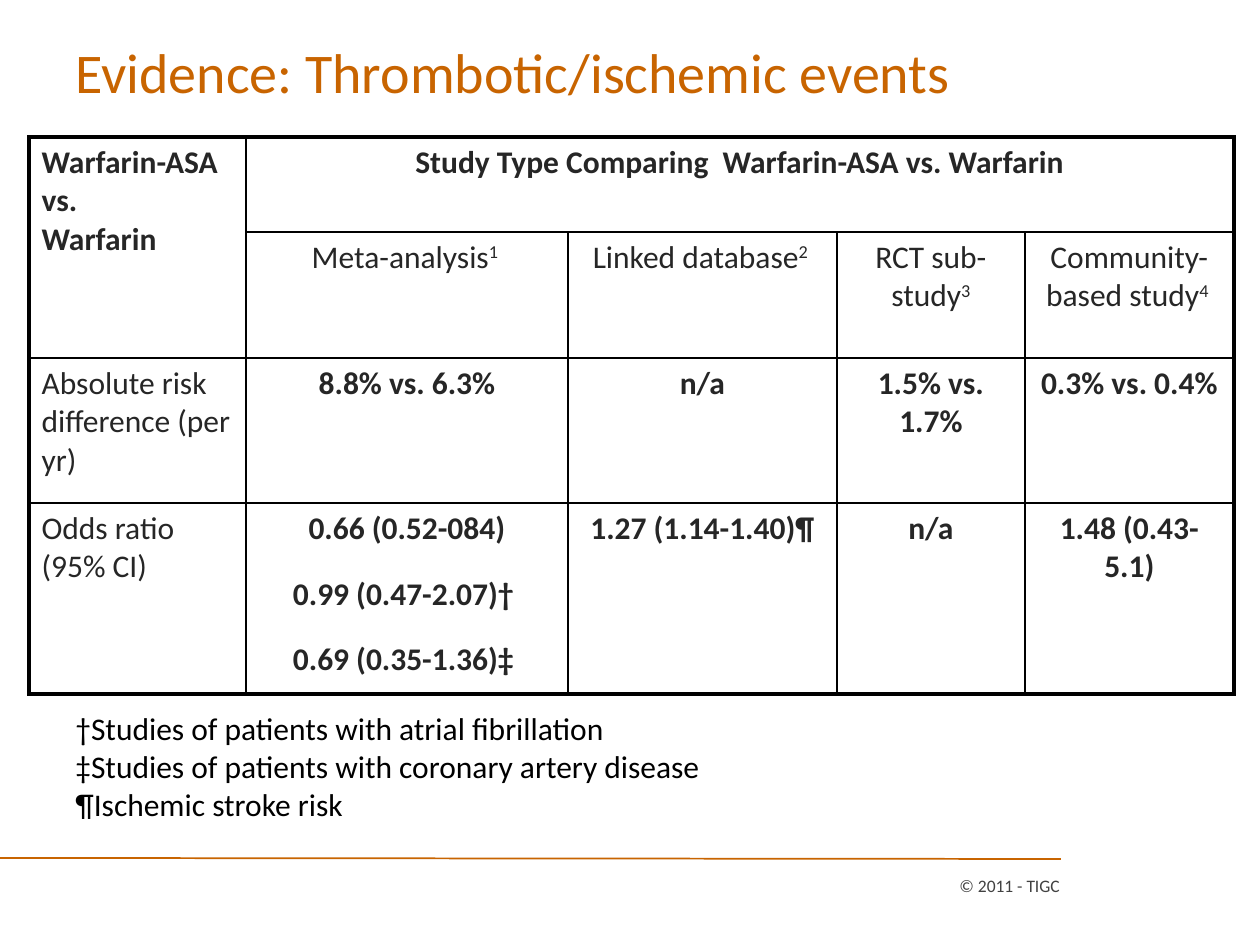
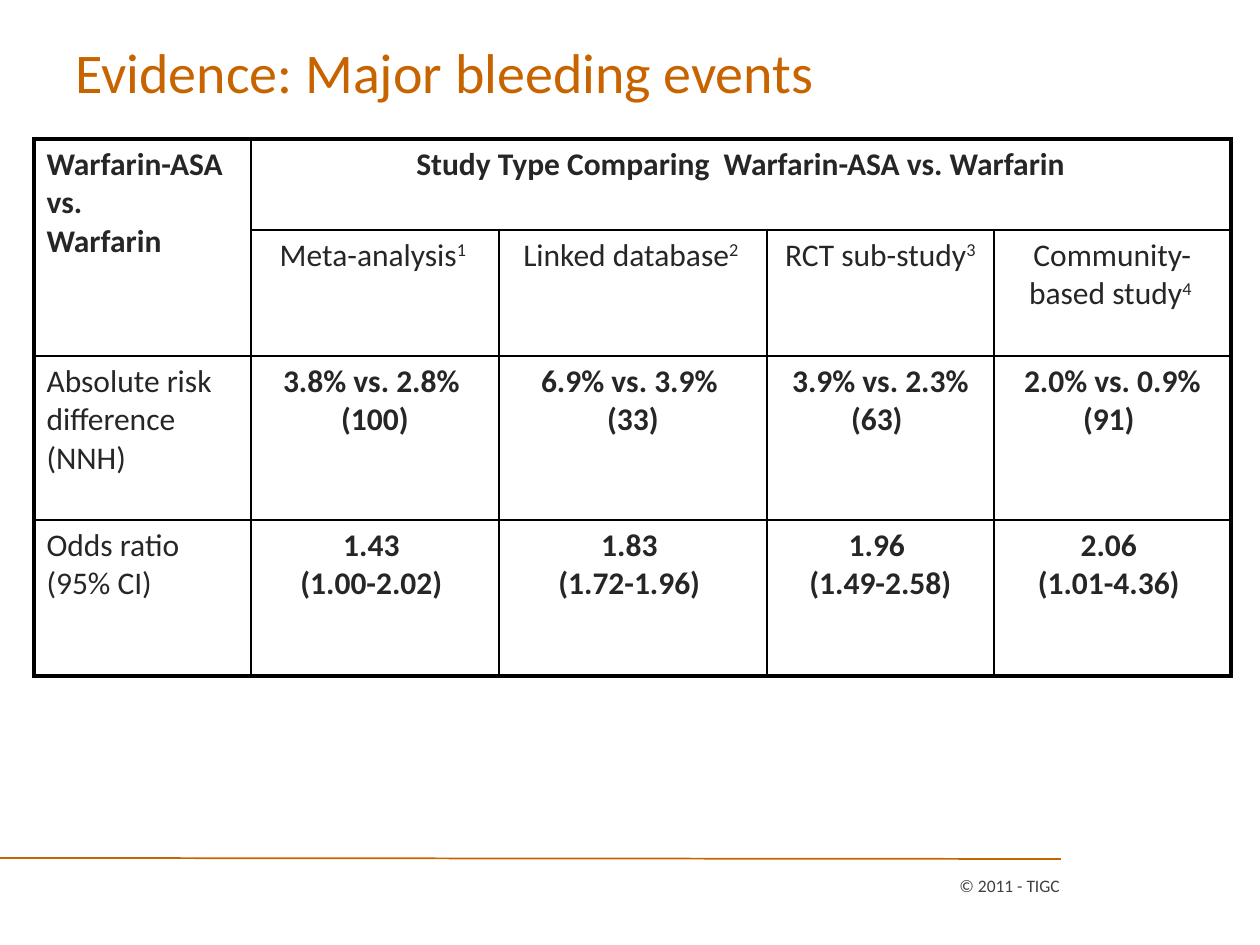
"""Build two evidence slides that compare warfarin-ASA with warfarin."""
import pptx
import pptx.dml.color
import pptx.enum.shapes
import pptx.enum.text
import pptx.oxml
import pptx.oxml.ns
import pptx.util

PX = 914400 // 126
ORANGE, INK, BLACK, GREY = "C86400", "262626", "000000", "414141"
LEFT = pptx.enum.text.PP_ALIGN.LEFT
CENTER = pptx.enum.text.PP_ALIGN.CENTER
RIGHT = pptx.enum.text.PP_ALIGN.RIGHT
TOP = pptx.enum.text.MSO_ANCHOR.TOP
MIDDLE = pptx.enum.text.MSO_ANCHOR.MIDDLE
THICK, THIN = 2.25, 1

TITLE = {"size": 32, "color": ORANGE}
NOTE = {"size": 18, "color": BLACK}
FOOTER = {"size": 10, "color": GREY}
BODY = {"size": 18, "color": INK}

CORNER = "Warfarin-ASA vs.\vWarfarin"
HEADING = "Study Type Comparing  Warfarin-ASA vs. Warfarin"
STUDIES = ["Meta-analysis^1 ", "Linked database^2 ", "RCT sub-study^3", "Community-based study^4 "]
COPYRIGHT = "© 2011 - TIGC"

SLIDES = [
    {
        "title": "Evidence: Thrombotic/ischemic events",
        "title_width": 1002,
        "origin": (29, 137),
        "columns": [217, 322, 269, 188, 209],
        "rows": [95, 103, 145, 191],
        "gap": 15.6,
        "results": [
            ["Absolute risk difference (per yr)", "8.8% vs. 6.3%", "n/a", "1.5% vs. 1.7%", "0.3% vs. 0.4%"],
            ["Odds ratio (95% CI)", "0.66 (0.52-084)\n0.99 (0.47-2.07)† \n0.69 (0.35-1.36)‡ ",
             "1.27 (1.14-1.40)¶", "n/a", "1.48 (0.43-5.1)"],
        ],
        "notes": "†Studies of patients with atrial fibrillation\n"
                 "‡Studies of patients with coronary artery disease\n"
                 "¶Ischemic stroke risk",
    },
    {
        "title": "Evidence: Major bleeding events",
        "title_width": 1071,
        "origin": (34, 139),
        "columns": [217, 248, 268, 227, 237],
        "rows": [91, 93, 164, 156],
        "gap": 0,
        "results": [
            ["Absolute risk difference (NNH)", "3.8% vs. 2.8% \n(100)", "6.9% vs. 3.9% \n(33)",
             "3.9% vs. 2.3% (63) ", "2.0% vs. 0.9% (91) "],
            ["Odds ratio (95% CI)", "1.43 \n(1.00-2.02) ", "1.83 \n(1.72-1.96) ",
             "1.96 \n(1.49-2.58)", "2.06 \n(1.01-4.36) "],
        ],
        "notes": "",
    },
]


def rgb(code):
    return pptx.dml.color.RGBColor.from_string(code)


def add_span(para, text, style, raised=False):
    span = para.add_run()
    span.text = text
    values = {"name": "Calibri", "size": pptx.util.Pt(style["size"]), "bold": style.get("bold", False)}
    for name, value in values.items():
        setattr(span.font, name, value)
    span.font.color.rgb = rgb(style["color"])
    if raised:
        span._r.get_or_add_rPr().set("baseline", "30000")


def write(frame, text, style, align=LEFT, gap=0):
    for index, line in enumerate(text.split("\n")):
        para = frame.add_paragraph() if index else frame.paragraphs[0]
        para.alignment = align
        if index and gap:
            para.space_before = pptx.util.Pt(gap)
        for number, part in enumerate(line.split("\v")):
            if number:
                para.add_line_break()
            base, _, mark = part.partition("^")
            add_span(para, base, style)
            if mark:
                add_span(para, mark, style, raised=True)


def add_text(page, area, text, style, align=LEFT, anchor=TOP):
    box = page.shapes.add_textbox(*(length * PX for length in area))
    frame = box.text_frame
    for name, value in {"word_wrap": True, "vertical_anchor": anchor}.items():
        setattr(frame, name, value)
    write(frame, text, style, align)


def add_footer(page):
    rule = page.shapes.add_connector(
        pptx.enum.shapes.MSO_CONNECTOR.STRAIGHT, 1061 * PX, 859 * PX, 0, 858 * PX)
    rule.line.color.rgb = rgb(ORANGE)
    rule.line.width = pptx.util.Pt(1)
    pptx.oxml.ns.qn("a:effectLst")
    rule._element.spPr.append(pptx.oxml.parse_xml(
        f'<a:effectLst {pptx.oxml.ns.nsdecls("a")}/>'))
    add_text(page, (673, 861, 399, 50), COPYRIGHT, FOOTER, RIGHT, MIDDLE)


def set_borders(cell, row, column, row_count, column_count):
    last_row = row + (cell.span_height if cell.is_merge_origin else 1)
    last_column = column + (cell.span_width if cell.is_merge_origin else 1)
    outer = {"L": column == 0, "R": last_column == column_count,
             "T": row == 0, "B": last_row == row_count}
    sides = [side for side in outer if outer[side] or not cell.is_spanned]
    for place, side in enumerate(sides):
        width = pptx.util.Pt(THICK if outer[side] else THIN)
        cell._tc.get_or_add_tcPr().insert(place, pptx.oxml.parse_xml(
            f'<a:ln{side} {pptx.oxml.ns.nsdecls("a")} w="{int(width)}"><a:solidFill>'
            f'<a:srgbClr val="{BLACK}"/></a:solidFill></a:ln{side}>'))


def add_results(page, content):
    texts = [[CORNER, HEADING, "", "", ""], [""] + STUDIES] + content["results"]
    columns, rows = content["columns"], content["rows"]
    area = (*content["origin"], sum(columns), sum(rows))
    table = page.shapes.add_table(
        len(rows), len(columns), *(length * PX for length in area)).table
    for name in ("first_row", "horz_banding"):
        setattr(table, name, False)
    for column, width in zip(table.columns, columns):
        column.width = width * PX
    for row, height in zip(table.rows, rows):
        row.height = height * PX
    table.cell(0, 0).merge(table.cell(1, 0))
    table.cell(0, 1).merge(table.cell(0, len(columns) - 1))
    for r, line in enumerate(texts):
        for c, text in enumerate(line):
            cell = table.cell(r, c)
            cell.fill.background()
            set_borders(cell, r, c, len(rows), len(columns))
            if text:
                style = {**BODY, "bold": r == 0 or (r > 1 and c > 0)}
                write(cell.text_frame, text, style, CENTER if c else LEFT, content["gap"])


def main():
    deck = pptx.Presentation()
    deck.slide_width, deck.slide_height = 1260 * PX, 945 * PX
    for content in SLIDES:
        page = deck.slides.add_slide(deck.slide_layouts[6])
        add_footer(page)
        add_text(page, (63, 38, content["title_width"], 67), content["title"], TITLE, anchor=MIDDLE)
        add_results(page, content)
        if content["notes"]:
            add_text(page, (63, 703, 798, 126), content["notes"], NOTE)
    deck.save("out.pptx")


if __name__ == "__main__":
    main()
